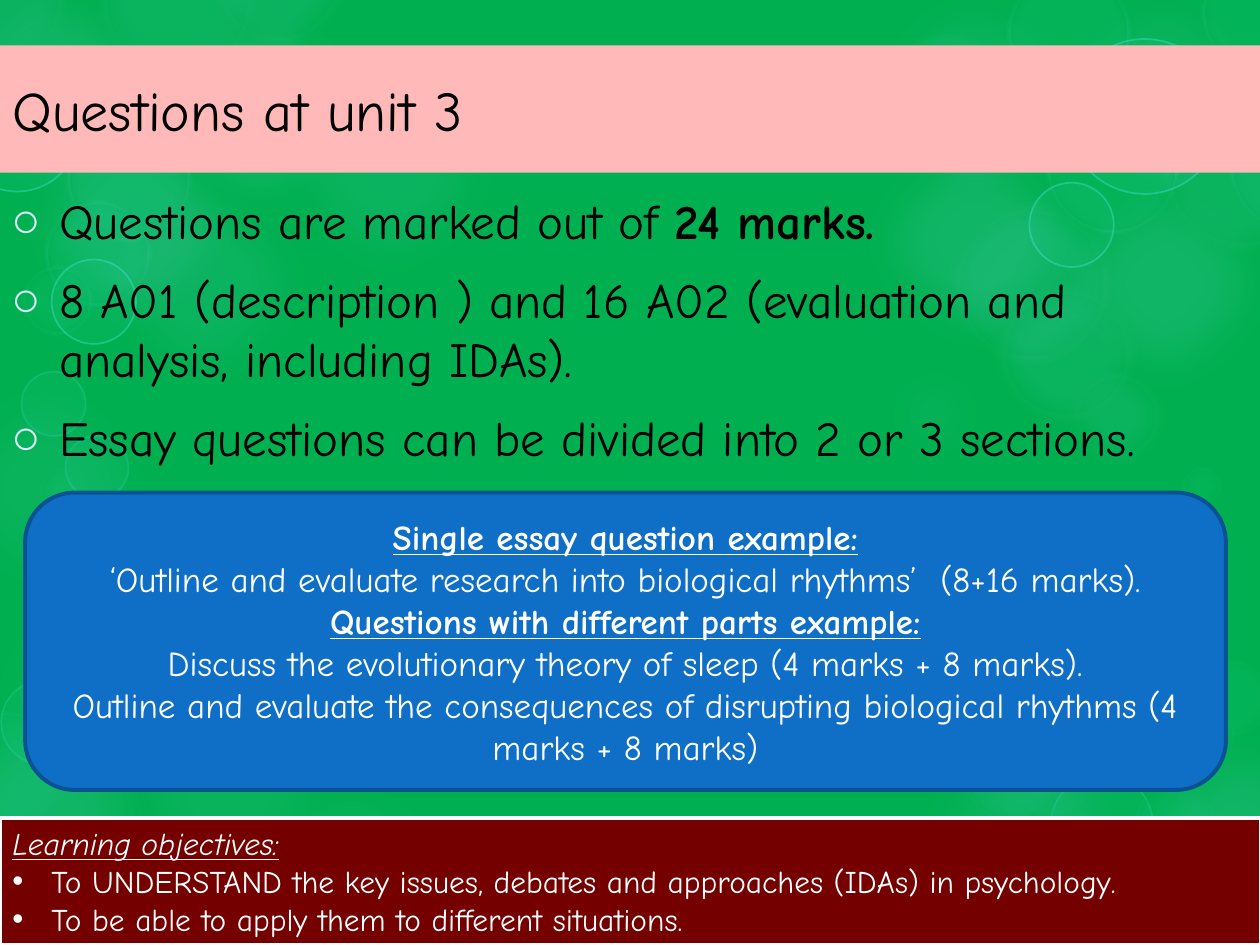
from lxml import etree
from pptx import Presentation
from pptx.dml.color import RGBColor
from pptx.enum import shapes, text
from pptx.oxml import ns
from pptx.util import Inches, Pt

COLORS = {
    "green": "00B050", "pink": "FFB9B9", "maroon": "740000", "blue": "0F6FC6",
    "navy": "0B5292", "black": "000000", "white": "FFFFFF", "bullet": "DBF5F9",
    "haze": "77D9E8", "glow": "E9F9FB", "aqua": "5EF0F7",
}
FONT = "Comic Neue"


def paint(fill, color, alpha=100):
    fill.solid()
    fill.fore_color.rgb = RGBColor.from_string(COLORS[color])
    if alpha < 100:
        clr = fill._xPr.find(".//" + ns.qn("a:srgbClr"))
        etree.SubElement(clr, ns.qn("a:alpha"), val=str(alpha * 1000))


def write(tf, paragraphs, size, color, align=text.PP_ALIGN.LEFT):
    """Fill a text frame; a paragraph is (bullet, indent, [(words, styles)])."""
    tf.word_wrap = True
    for i, (bullet, indent, runs) in enumerate(paragraphs):
        p = tf.paragraphs[0] if i == 0 else tf.add_paragraph()
        p.alignment = align
        if bullet:
            pPr = p._p.get_or_add_pPr()
            pPr.set("marL", str(Inches(indent)))
            pPr.set("indent", str(-Inches(indent)))
            if bullet == "○":
                p.space_before, p.space_after = Pt(5.6), Pt(6)
                clr = etree.SubElement(pPr, ns.qn("a:buClr"))
                etree.SubElement(clr, ns.qn("a:srgbClr"), val=COLORS["bullet"])
            etree.SubElement(pPr, ns.qn("a:buFont"), typeface="Arial")
            etree.SubElement(pPr, ns.qn("a:buChar"), char=bullet)
        for words, styles in runs:
            r = p.add_run()
            r.text = words
            r.font.name, r.font.size = FONT, Pt(size)
            r.font.color.rgb = RGBColor.from_string(COLORS[color])
            r.font.bold, r.font.italic, r.font.underline = (c in styles for c in "biu")


prs = Presentation()
prs.slide_width, prs.slide_height = Inches(10), Inches(7.5)
s = prs.slides.add_slide(prs.slide_layouts[5])
paint(s.background.fill, "green")

# Background bubbles: fill, fill alpha, line, line width, line alpha, soft edge
# in points, then the circles as (left, top, diameter)
bubbles = [
    ("haze", 8, None, 0, 0, 25, [
        (-0.25, 4.42, 2.09), (0.77, 5.24, 2.09), (7.29, 4.77, 2.09),
        (1.73, 5.96, 2.09), (-0.69, 2.82, 2.09)]),
    ("haze", 10, None, 0, 0, 25, [
        (0.57, 1.2, 2.09), (2.05, 0.31, 2.09), (8.2, -0.32, 2.09),
        (6.69, -0.29, 2.09), (7.06, 5.62, 2.09), (6.75, 2.62, 1.33)]),
    ("haze", 15, None, 0, 0, 25, [
        (0.57, 6.27, 2.09), (-0.56, -0.32, 2.09), (1.01, -0.18, 2.09),
        (0, 0.72, 2.09), (8.2, 1.2, 2.09), (8.81, 5.62, 2.09),
        (-0.69, 5.41, 2.09), (6.69, 0.86, 2.09)]),
    ("haze", 10, "glow", 14, 6, 12.5, [
        (9.18, 0.65, 1.37), (6.94, 0.23, 1.14), (7.52, 1.59, 1.33),
        (7.89, 2.24, 1.14), (8.47, 2.91, 0.79), (0.75, -0.66, 1.31),
        (1.64, -0.74, 1.13), (-0.57, -0.57, 1.13)]),
    ("haze", 6, "glow", 14, 4, 12.5, [
        (0.3, 4.73, 1.53), (6.32, 7.1, 1.25), (6.7, 7.01, 1.36),
        (8.29, 7.01, 1.33)]),
    ("aqua", 5, "aqua", 1, 15, 0, [
        (0.01, 5.4, 0.67), (8.34, 6.14, 0.81), (0.17, 2.95, 0.51),
        (0.52, 3.46, 0.5)]),
    ("aqua", 5, "aqua", 5, 15, 5, [
        (-0.35, 6.75, 1.13), (-0.44, 5.64, 0.98), (7.63, 5.73, 0.81),
        (9, 6.2, 0.66), (9.2, 5.53, 0.61), (9.5, 5.24, 0.6),
        (9.37, 3.7, 0.33), (9.18, 3.87, 0.33), (9.41, 4.03, 0.33),
        (0.3, 3.7, 0.39)]),
    ("aqua", 5, "aqua", 1, 30, 0, [
        (-0.36, 0.53, 0.99), (0.41, 2.06, 0.67), (8.47, 0.31, 1.23),
        (8.17, 1.45, 0.67)]),
    ("aqua", 5, "aqua", 5, 30, 5, [
        (0.52, 0.92, 1), (0.35, 1.59, 0.85), (0.17, 2.1, 0.57),
        (7.99, -0.24, 0.99), (9.53, -0.4, 1), (9.75, 0.77, 1.1),
        (8.3, 0.8, 1.06)]),
]
for fill, alpha, line, width, line_alpha, soft, circles in bubbles:
    for left, top, size in circles:
        sp = s.shapes.add_shape(shapes.MSO_SHAPE.OVAL, Inches(left), Inches(top),
                                Inches(size), Inches(size))
        sp.shadow.inherit = False
        paint(sp.fill, fill, alpha)
        if line:
            sp.line.width = Pt(width)
            paint(sp.line.fill, line, line_alpha)
        else:
            sp.line.fill.background()
        if soft:
            effects = sp._element.spPr.find(ns.qn("a:effectLst"))
            etree.SubElement(effects, ns.qn("a:softEdge"), rad=str(Pt(soft)))

# Title band, brought in front of the bubbles
title = s.shapes.title
s.shapes._spTree.append(title._element)
title.left, title.top, title.width, title.height = map(Inches, (0, 0.36, 10, 1.01))
paint(title.fill, "pink")
title.text_frame.vertical_anchor = text.MSO_ANCHOR.MIDDLE
write(title.text_frame, [(None, 0, [("Questions at unit 3", "")])], 32, "black")

# Main points
body = s.shapes.add_textbox(Inches(-0.01), Inches(1.31), Inches(9.99), Inches(2.6))
body.text_frame.vertical_anchor = text.MSO_ANCHOR.MIDDLE
write(body.text_frame, [
    ("○", 0.38, [("Questions are marked out of ", ""), ("24 marks.", "b")]),
    ("○", 0.38, [("8 A01 (description ) and 16 A02 (evaluation and analysis, "
                  "including IDAs).", "")]),
    ("○", 0.38, [("Essay questions can be divided into 2 or 3 sections.", "")]),
], 28, "black")

# Learning objectives and example questions
objectives = [
    (None, 0, [("Learning objectives:", "iu")]),
    ("•", 0.31, [("To UNDERSTAND the key issues, debates and approaches (IDAs) "
                  "in psychology.", "")]),
    ("•", 0.31, [("To be able to apply them to different situations.", "")]),
]
examples = [(None, 0, [run]) for run in [
    ("Single essay question example:", "bu"),
    ("‘Outline and evaluate research into biological rhythms’  (8+16 marks).", ""),
    ("Questions with different parts example:", "bu"),
    ("Discuss the evolutionary theory of sleep (4 marks + 8 marks).", ""),
    ("Outline and evaluate the consequences of disrupting biological rhythms "
     "(4 marks + 8 marks)", ""),
]]
panels = [
    (shapes.MSO_SHAPE.RECTANGLE, (0, 6.49, 10.01, 1.01), "maroon", "white", 2,
     objectives, 18, text.PP_ALIGN.LEFT, text.MSO_ANCHOR.TOP),
    (shapes.MSO_SHAPE.ROUNDED_RECTANGLE, (0.2, 3.91, 9.53, 2.36), "blue", "navy", 2.25,
     examples, 20, text.PP_ALIGN.CENTER, text.MSO_ANCHOR.MIDDLE),
]
for kind, box, fill, line, width, paragraphs, size, align, anchor in panels:
    sp = s.shapes.add_shape(kind, *map(Inches, box))
    sp.shadow.inherit = False
    paint(sp.fill, fill)
    paint(sp.line.fill, line)
    sp.line.width = Pt(width)
    sp.text_frame.vertical_anchor = anchor
    write(sp.text_frame, paragraphs, size, "white", align)

prs.save("out.pptx")
